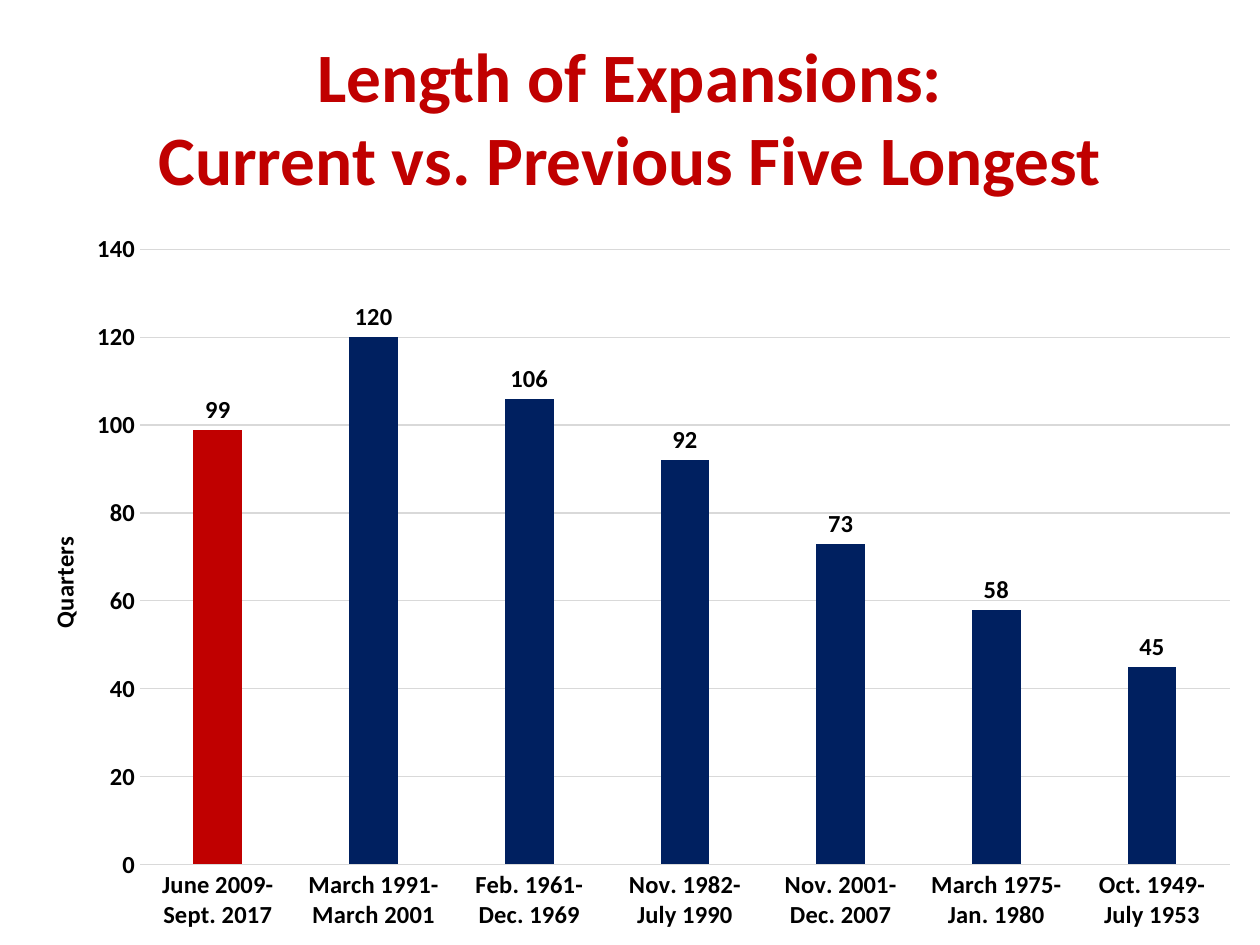
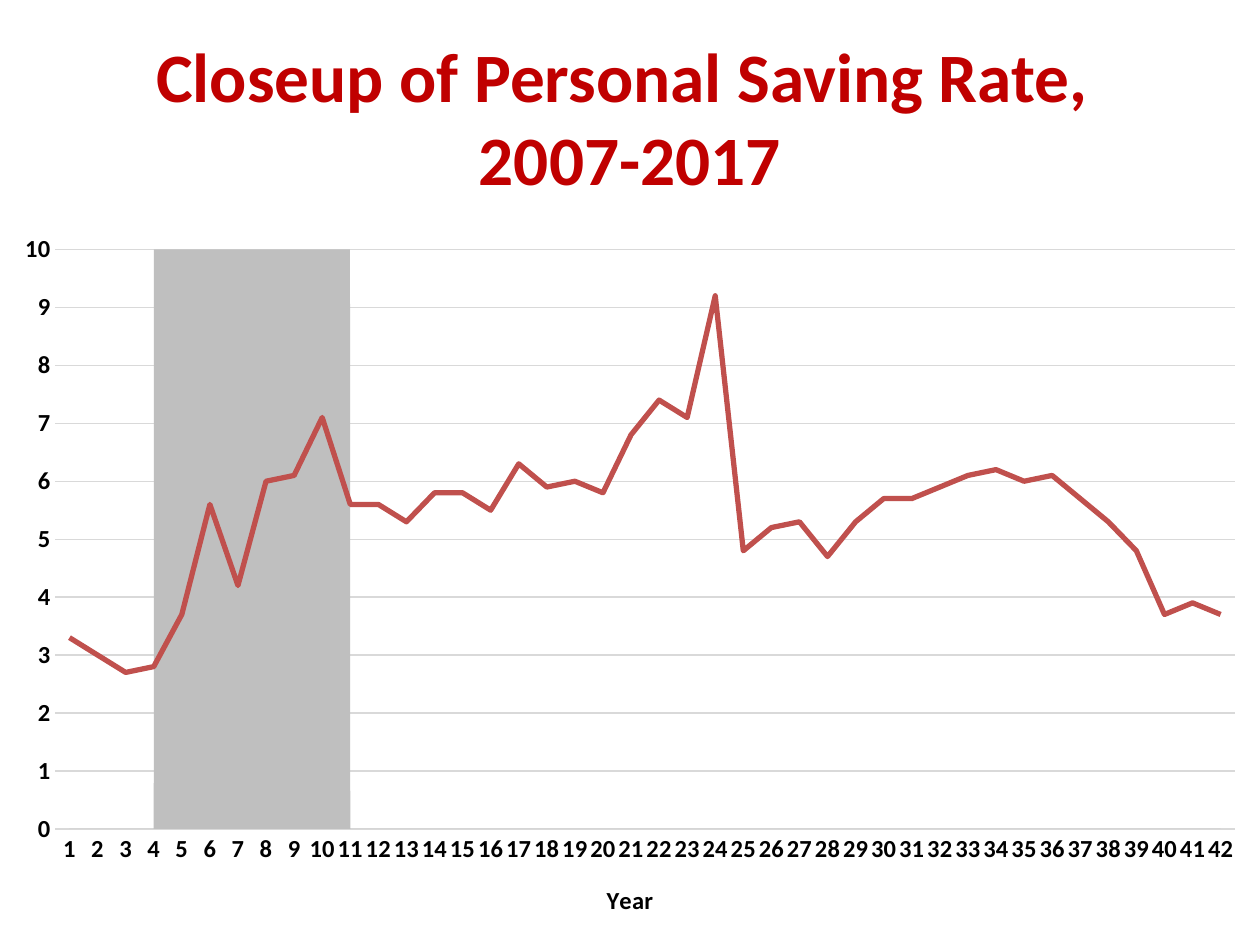
import pptx
import pptx.chart.data
import pptx.dml.color
import pptx.enum.chart
import pptx.enum.text
import pptx.oxml
import pptx.oxml.ns
import pptx.util

Inches, Pt = pptx.util.Inches, pptx.util.Pt
RGBColor = pptx.dml.color.RGBColor
ChartType = pptx.enum.chart.XL_CHART_TYPE
qn = pptx.oxml.ns.qn

RED = RGBColor(0xC0, 0x00, 0x00)
NAVY = RGBColor(0x00, 0x20, 0x60)
LINE_RED = RGBColor(0xC0, 0x50, 0x4D)
RECESSION_GREY = RGBColor(0xBF, 0xBF, 0xBF)
GRID_GREY = RGBColor(0xD9, 0xD9, 0xD9)
BLACK = RGBColor(0x00, 0x00, 0x00)
FONT = "Calibri"

EXPANSIONS_TITLE = ("Length of Expansions:", "Current vs. Previous Five Longest")
EXPANSIONS = [
    ("June 2009-Sept. 2017", 99),
    ("March 1991- March 2001", 120),
    ("Feb. 1961- Dec. 1969", 106),
    ("Nov. 1982- July 1990", 92),
    ("Nov. 2001- Dec. 2007", 73),
    ("March 1975- Jan. 1980", 58),
    ("Oct. 1949- July 1953", 45),
]

SAVING_TITLE = ("Closeup of Personal Saving Rate, ", "2007-2017")
SAVING_RATES = [
    3.3, 3, 2.7, 2.8, 3.7, 5.6, 4.2, 6, 6.1, 7.1, 5.6, 5.6, 5.3, 5.8,
    5.8, 5.5, 6.3, 5.9, 6, 5.8, 6.8, 7.4, 7.1, 9.2, 4.8, 5.2, 5.3, 4.7,
    5.3, 5.7, 5.7, 5.9, 6.1, 6.2, 6, 6.1, 5.7, 5.3, 4.8, 3.7, 3.9, 3.7,
]
RECESSION_QUARTERS = range(5, 11)
RECESSION_HEIGHT = 1000


def style_font(font, size, color=BLACK):
    font.name = FONT
    font.size = Pt(size)
    font.bold = True
    font.color.rgb = color


def add_titled_slide(prs, title_lines):
    slide = prs.slides.add_slide(prs.slide_layouts[5])
    title = slide.shapes.title
    title.left, title.top = Inches(0.5), Inches(0.3)
    title.width, title.height = Inches(9), Inches(1.25)
    title.text_frame.vertical_anchor = pptx.enum.text.MSO_ANCHOR.MIDDLE
    paragraph = title.text_frame.paragraphs[0]
    paragraph.alignment = pptx.enum.text.PP_ALIGN.CENTER
    for index, line in enumerate(title_lines):
        if index:
            paragraph.add_line_break()
        run = paragraph.add_run()
        run.text = line
        style_font(run.font, 39.6, RED)
    return slide


def set_layout(element, **fractions):
    layout = element.find(qn("c:layout"))
    if layout is None:
        layout = pptx.oxml.parse_xml(f"<c:layout {pptx.oxml.ns.nsdecls('c')}/>")
        element.insert(0, layout)
    manual = layout.makeelement(qn("c:manualLayout"), {})
    layout.append(manual)
    settings = {"xMode": "edge", "yMode": "edge", **fractions}
    if "w" in fractions:
        settings = {"layoutTarget": "inner", **settings}
    for tag, value in settings.items():
        manual.append(manual.makeelement(qn(f"c:{tag}"), {"val": str(value)}))


def title_axis(axis, text, rotation):
    frame = axis.axis_title.text_frame
    run = frame.paragraphs[0].add_run()
    run.text = text
    style_font(run.font, 14)
    body = frame._txBody.find(qn("a:bodyPr"))
    body.set("rot", str(rotation))
    body.set("vert", "horz")


def add_styled_chart(slide, kind, left, width, data, plot_area, maximum, step):
    chart = slide.shapes.add_chart(
        kind, Inches(left), Inches(1.75), Inches(width), Inches(5.75), data
    ).chart
    chart.has_legend = False
    chart.has_title = False
    chart.font.name = FONT
    chart.font.size = Pt(10)
    chart.font.color.rgb = BLACK
    categories, values = chart.category_axis, chart.value_axis
    for axis in (categories, values):
        axis.major_tick_mark = axis.minor_tick_mark = pptx.enum.chart.XL_TICK_MARK.NONE
        style_font(axis.tick_labels.font, 14)
        body = axis._element.find(qn("c:txPr")).find(qn("a:bodyPr"))
        body.set("rot", "-60000000")
    values.minimum_scale, values.maximum_scale = 0, maximum
    values.major_unit = step
    values.has_major_gridlines = True
    values.format.line.fill.background()
    categories.has_major_gridlines = False
    for line in (categories.format.line, values.major_gridlines.format.line):
        line.color.rgb = GRID_GREY
        line.width = Pt(0.75)
    set_layout(chart._chartSpace.chart.plotArea, **plot_area)
    return chart


def build_expansions(prs):
    slide = add_titled_slide(prs, EXPANSIONS_TITLE)
    data = pptx.chart.data.CategoryChartData()
    data.categories = [period for period, _ in EXPANSIONS]
    data.add_series("Series 1", [length for _, length in EXPANSIONS])
    chart = add_styled_chart(
        slide, ChartType.COLUMN_CLUSTERED, 0.04, 9.92, data,
        dict(x=0.108, y=0.04, w=0.872, h=0.849), 140, 20,
    )
    title_axis(chart.value_axis, "Quarters", -5400000)
    set_layout(chart.value_axis.axis_title._element, x=0.03, y=0.43)
    plot = chart.plots[0]
    plot.gap_width, plot.overlap = 219, -27
    plot.vary_by_categories = False
    bars = plot.series[0]
    for index in range(len(EXPANSIONS)):
        fill = bars.points[index].format.fill
        fill.solid()
        fill.fore_color.rgb = NAVY if index else RED
    labels = bars.data_labels
    labels.show_value = True
    labels.position = pptx.enum.chart.XL_LABEL_POSITION.OUTSIDE_END
    style_font(labels.font, 14)


def move_last_series_to_line(chart):
    area = chart.plots[0]._element
    line = pptx.oxml.parse_xml(
        f"<c:lineChart {pptx.oxml.ns.nsdecls('c')}>"
        '<c:grouping val="standard"/><c:varyColors val="0"/></c:lineChart>'
    )
    line.append(area.findall(qn("c:ser"))[-1])
    line.append(line.makeelement(qn("c:marker"), {"val": "1"}))
    for axis_id in area.findall(qn("c:axId")):
        line.append(line.makeelement(qn("c:axId"), {"val": axis_id.get("val")}))
    area.addnext(line)


def build_saving_rate(prs):
    slide = add_titled_slide(prs, SAVING_TITLE)
    quarters = range(1, len(SAVING_RATES) + 1)
    data = pptx.chart.data.CategoryChartData()
    data.categories = [str(quarter) for quarter in quarters]
    data.add_series(
        "Series 1",
        [RECESSION_HEIGHT if q in RECESSION_QUARTERS else 0 for q in quarters],
    )
    data.add_series("Series 2", SAVING_RATES)
    chart = add_styled_chart(
        slide, ChartType.AREA_STACKED, 0, 10, data,
        dict(x=0.044, y=0.04, w=0.936, h=0.8), 10, 1,
    )
    title_axis(chart.category_axis, "Year", 0)
    chart.value_axis._element.find(qn("c:crossBetween")).set("val", "between")
    move_last_series_to_line(chart)
    recession_plot, rate_plot = chart.plots
    recession_plot.vary_by_categories = False
    recession = recession_plot.series[0].format
    recession.fill.solid()
    recession.fill.fore_color.rgb = RECESSION_GREY
    recession.line.fill.background()
    rate = rate_plot.series[0]
    rate.smooth = False
    rate.marker.style = pptx.enum.chart.XL_MARKER_STYLE.NONE
    rate.format.line.color.rgb = LINE_RED
    rate.format.line.width = Pt(3)


def main():
    prs = pptx.Presentation()
    prs.slide_width, prs.slide_height = Inches(10), Inches(7.5)
    build_expansions(prs)
    build_saving_rate(prs)
    prs.save("out.pptx")


if __name__ == "__main__":
    main()
